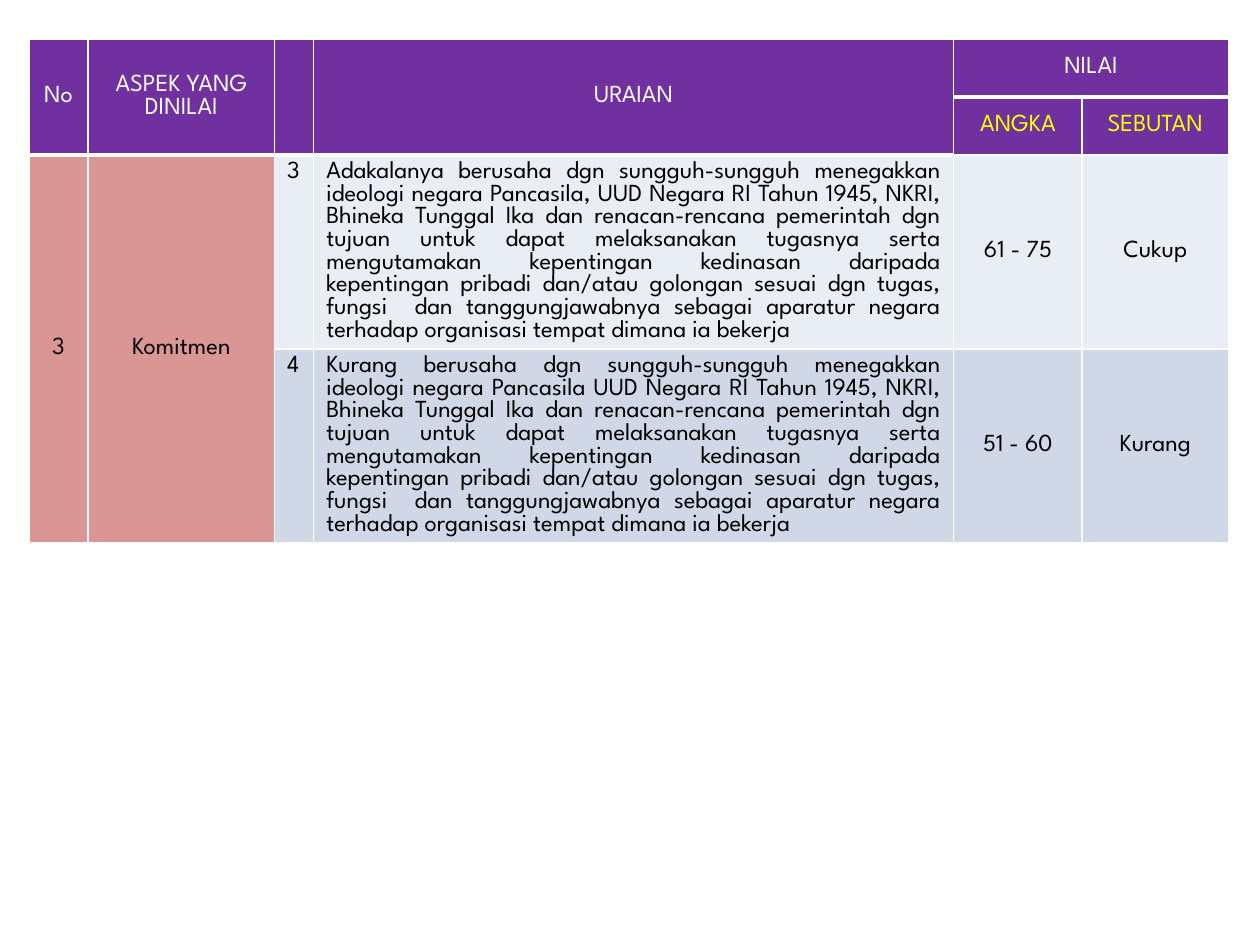
from lxml import etree
from pptx import Presentation, util as u
from pptx.dml.color import RGBColor
from pptx.enum import text
from pptx.oxml import ns

# Colours and font
PURPLE = RGBColor(0x70, 0x30, 0xA0)
ROSE = RGBColor(0xD9, 0x96, 0x94)
PALE = RGBColor(0xE9, 0xED, 0xF4)
BLUE_GREY = RGBColor(0xD0, 0xD8, 0xE8)
WHITE = RGBColor(0xFF, 0xFF, 0xFF)
YELLOW = RGBColor(0xFF, 0xFF, 0x00)
BLACK = RGBColor(0, 0, 0)
FONT = "League Spartan"

# Grid, in inches
LEFT, TOP = 0.23, 0.31
COLUMNS = [0.47, 1.48, 0.31, 5.08, 1.02, 1.16]
ROWS = [0.46, 0.46, 1.03, 1.18]

# Cell formats
CENTRED = {"alignment": text.PP_ALIGN.CENTER, "anchor": text.MSO_ANCHOR.MIDDLE}
NUMBER = {"alignment": text.PP_ALIGN.LEFT, "anchor": text.MSO_ANCHOR.TOP}
JUSTIFIED = {"alignment": text.PP_ALIGN.JUSTIFY, "anchor": text.MSO_ANCHOR.TOP}

DESCRIPTION = (
    "{} berusaha dgn sungguh-sungguh menegakkan ideologi negara Pancasila{} "
    "UUD Negara RI Tahun 1945, NKRI, Bhineka Tunggal Ika dan renacan-rencana "
    "pemerintah dgn tujuan untuk dapat melaksanakan tugasnya serta mengutamakan "
    "kepentingan kedinasan daripada kepentingan pribadi dan/atau golongan sesuai "
    "dgn tugas, fungsi  dan tanggungjawabnya sebagai aparatur negara terhadap "
    "organisasi tempat dimana ia bekerja"
)
HEADINGS = ["No", "ASPEK YANG DINILAI", "", "URAIAN", "NILAI"]
GRADES = [
    ("3", DESCRIPTION.format("Adakalanya", ","), "61 - 75", "Cukup", PALE),
    ("4", DESCRIPTION.format("Kurang", ""), "51 - 60", "Kurang", BLUE_GREY),
]


def set_borders(cell, bottom=1):
    """Give the cell white borders; widths are in points."""
    properties = cell._tc.get_or_add_tcPr()
    widths = {"lnL": 1, "lnR": 1, "lnT": 1, "lnB": bottom}
    for position, (side, width) in enumerate(widths.items()):
        line = etree.Element(ns.qn(f"a:{side}"), w=str(u.Pt(width)))
        fill = etree.SubElement(line, ns.qn("a:solidFill"))
        etree.SubElement(fill, ns.qn("a:srgbClr"), val=str(WHITE))
        properties.insert(position, line)


def fill_cell(cell, words, fill, colour=BLACK, layout=CENTRED):
    cell.fill.solid()
    cell.fill.fore_color.rgb = fill
    cell.vertical_anchor = layout["anchor"]
    paragraph = cell.text_frame.paragraphs[0]
    paragraph.alignment = layout["alignment"]
    if words:
        run = paragraph.add_run()
        run.text = words
        for name, value in {"size": u.Pt(14), "name": FONT}.items():
            setattr(run.font, name, value)
        run.font.color.rgb = colour


def add_grid(slide):
    table = slide.shapes.add_table(
        len(ROWS), len(COLUMNS), u.Inches(LEFT), u.Inches(TOP),
        u.Inches(sum(COLUMNS)), u.Inches(sum(ROWS))).table
    for column, width in zip(table.columns, COLUMNS):
        column.width = u.Inches(width)
    for row, height in zip(table.rows, ROWS):
        row.height = u.Inches(height)
    for index, row in enumerate(table.rows):
        for cell in row.cells:
            set_borders(cell, bottom=3 if index == 0 else 1)
    return table


def add_header(table):
    for column, heading in enumerate(HEADINGS):
        cell = table.cell(0, column)
        # The last heading spans two columns, the others two rows
        cell.merge(table.cell(0, 5) if heading == "NILAI" else table.cell(1, column))
        fill_cell(cell, heading, PURPLE, WHITE)
    for column, heading in enumerate(["ANGKA", "SEBUTAN"], start=4):
        fill_cell(table.cell(1, column), heading, PURPLE, YELLOW)


def add_body(table):
    for column, words in enumerate(["3", "Komitmen"]):
        table.cell(2, column).merge(table.cell(3, column))
        fill_cell(table.cell(2, column), words, ROSE)
    layouts = [NUMBER, JUSTIFIED, CENTRED, CENTRED]
    for row, (*entries, fill) in enumerate(GRADES, start=2):
        for column, (words, layout) in enumerate(zip(entries, layouts), start=2):
            fill_cell(table.cell(row, column), words, fill, layout=layout)


def main():
    presentation = Presentation()
    presentation.slide_width = u.Inches(10)
    presentation.slide_height = u.Inches(7.5)
    slide = presentation.slides.add_slide(presentation.slide_layouts[6])

    # Assessment table
    table = add_grid(slide)
    add_header(table)
    add_body(table)

    presentation.save("out.pptx")


if __name__ == "__main__":
    main()
